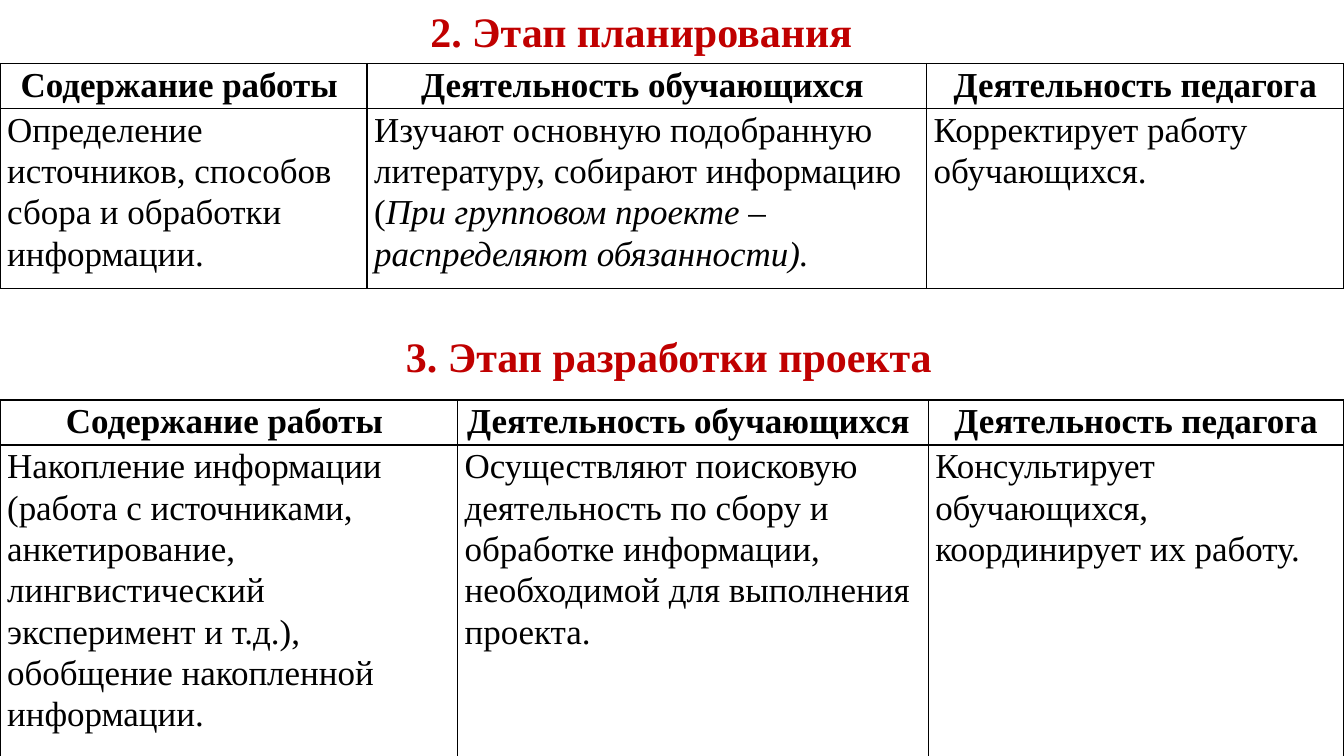
import pptx
import pptx.dml.color
import pptx.enum.text
import pptx.oxml
import pptx.oxml.ns
import pptx.util
from dataclasses import dataclass

Cm, Pt = pptx.util.Cm, pptx.util.Pt
RGBColor = pptx.dml.color.RGBColor
ALIGN = pptx.enum.text.PP_ALIGN
ANCHOR = pptx.enum.text.MSO_ANCHOR
AUTO_SIZE = pptx.enum.text.MSO_AUTO_SIZE


@dataclass(frozen=True)
class Theme:
    font: str = "Times New Roman"
    heading: RGBColor = RGBColor(0xC0, 0x00, 0x00)
    ink: RGBColor = RGBColor(0x00, 0x00, 0x00)
    heading_size: int = 30
    table_size: int = 25
    border_width: int = 1


THEME = Theme()
SLIDE_WIDTH, SLIDE_HEIGHT = 33.87, 19.05
HEADER_HEIGHT = 1.13

HEADING_FRAME = {
    "word_wrap": False,
    "auto_size": AUTO_SIZE.SHAPE_TO_FIT_TEXT,
    "vertical_anchor": ANCHOR.TOP,
}
HEADING_FONT = {"name": THEME.font, "size": Pt(THEME.heading_size), "bold": True}
CELL_FONT = {"name": THEME.font, "size": Pt(THEME.table_size)}
CELL_MARGINS = {
    "margin_left": Cm(0.18),
    "margin_right": Cm(0.18),
    "margin_top": 0,
    "margin_bottom": 0,
}

COLUMN_TITLES = [
    "Содержание работы ",
    "Деятельность обучающихся ",
    "Деятельность педагога",
]

# Each activity is a list of (wording, italic) pieces.
STAGES = [
    {
        "heading": "2. Этап планирования",
        "heading_box": (10.59, 0, 11.25, 1.54),
        "table_top": 1.6,
        "columns": [9.25, 14.1, 10.52],
        "body_height": 4.53,
        "activities": [
            [("Определение источников, способов сбора и обработки информации.", False)],
            [
                ("Изучают основную подобранную литературу, собирают информацию (", False),
                ("При групповом проекте – распределяют обязанности).", True),
            ],
            [("Корректирует работу обучающихся.", False)],
        ],
    },
    {
        "heading": "3. Этап разработки проекта",
        "heading_box": (9.98, 8.2, 13.89, 1.54),
        "table_top": 10.08,
        "columns": [11.53, 11.86, 10.48],
        "body_height": 7.95,
        "activities": [
            [(
                "Накопление информации (работа с источниками, анкетирование, "
                "лингвистический эксперимент и т.д.), обобщение накопленной информации.",
                False,
            )],
            [(
                "Осуществляют поисковую деятельность по сбору и обработке "
                "информации, необходимой для выполнения проекта.",
                False,
            )],
            [("Консультирует обучающихся, координирует их работу.", False)],
        ],
    },
]


def apply_format(target, values):
    for attribute, value in values.items():
        setattr(target, attribute, value)


def write_heading(heading, wording, box):
    sides = ("left", "top", "width", "height")
    apply_format(heading, dict(zip(sides, map(Cm, box))))
    frame = heading.text_frame
    frame.text = wording
    apply_format(frame, HEADING_FRAME)
    line = frame.paragraphs[0]
    line.alignment = ALIGN.LEFT
    font = line.runs[0].font
    apply_format(font, HEADING_FONT)
    font.color.rgb = THEME.heading


def add_borders(cell):
    properties = cell._tc.get_or_add_tcPr()
    for side in ("lnL", "lnR", "lnT", "lnB"):
        properties.append(pptx.oxml.parse_xml(
            f'<a:{side} {pptx.oxml.ns.nsdecls("a")} w="{Pt(THEME.border_width)}">'
            f'<a:solidFill><a:srgbClr val="{THEME.ink}"/></a:solidFill></a:{side}>'
        ))


def write_cell(cell, pieces, is_header):
    apply_format(cell, CELL_MARGINS)
    add_borders(cell)
    cell.fill.background()
    paragraph = cell.text_frame.paragraphs[0]
    paragraph.line_spacing = 1.07
    paragraph.alignment = ALIGN.CENTER if is_header else ALIGN.LEFT
    for wording, italic in pieces:
        run = paragraph.add_run()
        run.text = wording
        apply_format(run.font, {**CELL_FONT, "bold": is_header, "italic": italic})
        run.font.color.rgb = THEME.ink


def add_stage_table(slide, top, columns, body_height, activities):
    heights = [HEADER_HEIGHT, body_height]
    table = slide.shapes.add_table(
        len(heights), len(columns), 0, Cm(top), Cm(SLIDE_WIDTH), Cm(sum(heights))
    ).table
    apply_format(table, {"first_row": False, "horz_banding": False})
    for column, width in zip(table.columns, columns):
        column.width = Cm(width)
    for row, height in zip(table.rows, heights):
        row.height = Cm(height)
    header = [[(title, False)] for title in COLUMN_TITLES]
    for row_index, contents in enumerate([header, activities]):
        for column_index, pieces in enumerate(contents):
            write_cell(table.cell(row_index, column_index), pieces, row_index == 0)


def add_stage(slide, heading, stage):
    write_heading(heading, stage["heading"], stage["heading_box"])
    add_stage_table(
        slide, stage["table_top"], stage["columns"],
        stage["body_height"], stage["activities"],
    )


def main():
    presentation = pptx.Presentation()
    presentation.slide_width = Cm(SLIDE_WIDTH)
    presentation.slide_height = Cm(SLIDE_HEIGHT)
    slide = presentation.slides.add_slide(presentation.slide_layouts[5])
    planning, development = STAGES
    add_stage(slide, slide.shapes.title, planning)
    add_stage(slide, slide.shapes.add_textbox(0, 0, 0, 0), development)
    presentation.save("out.pptx")


if __name__ == "__main__":
    main()
